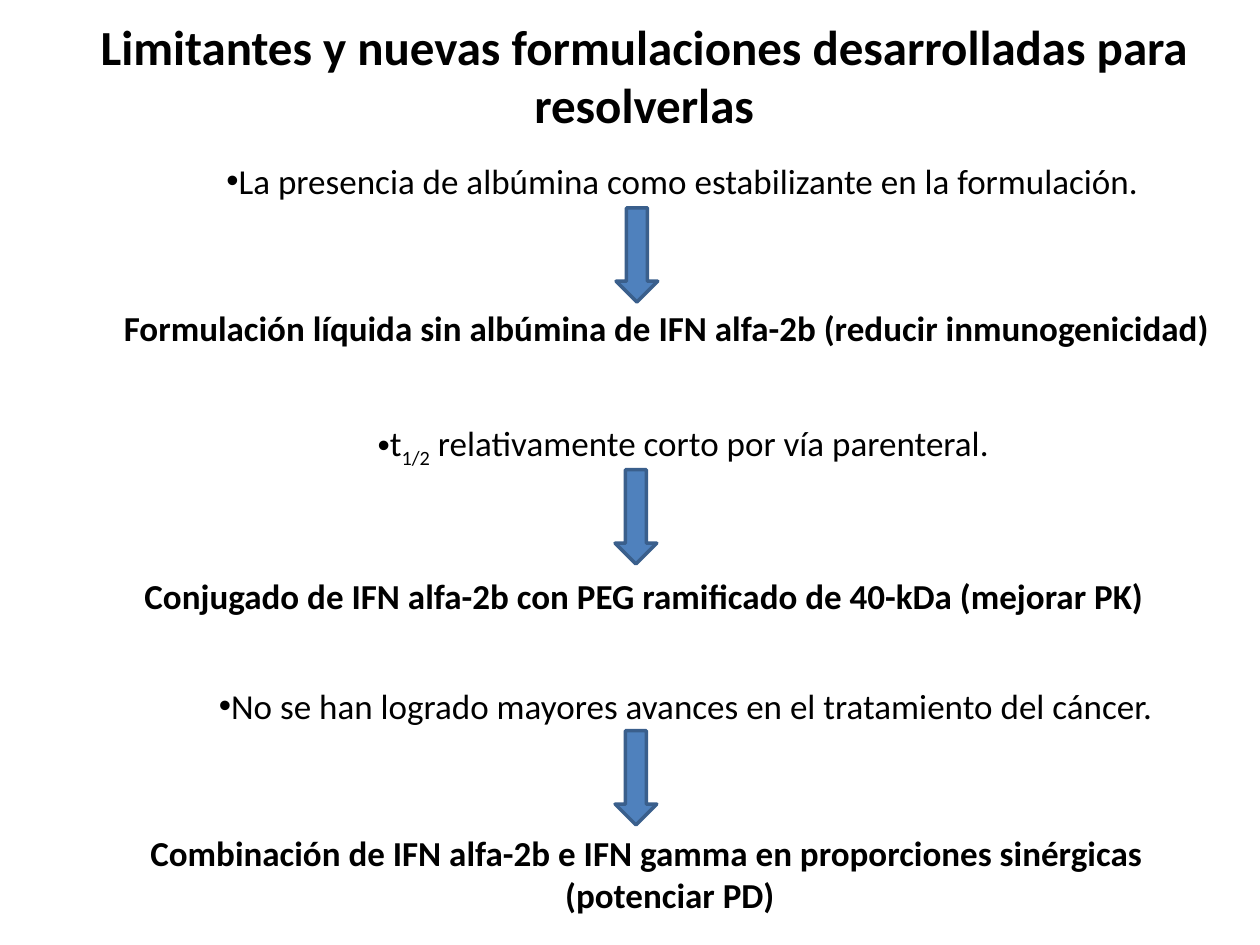
from lxml.etree import SubElement
from pptx import Presentation
from pptx.dml.color import RGBColor
from pptx.enum.shapes import MSO_SHAPE
from pptx.enum.text import MSO_AUTO_SIZE, PP_ALIGN
from pptx.oxml.ns import qn
from pptx.util import Cm, Pt

INK = {"text": "000000", "arrow": "4F81BD", "edge": "3A5F8C"}
FONT = "Calibri"
TITLE = "Limitantes y nuevas formulaciones desarrolladas para resolverlas"
PAIRS = [
    {"box": (0.64, 3.1, 24.33, 4.09), "arrow": (12.42, 4.19), "hang": 0,
     "limit": [("La presencia de albúmina como estabilizante en la formulación.", 0)],
     "answer": "Formulación líquida sin albúmina de IFN alfa-2b (reducir inmunogenicidad)"},
    {"box": (1.07, 8.38, 23.5, 4.09), "arrow": (12.4, 9.47), "hang": -0.94,
     "limit": [("t", 0), ("1/2", -25000), (" relativamente corto por vía parenteral.", 0)],
     "answer": "Conjugado de IFN alfa-2b con PEG ramificado de 40-kDa (mejorar PK)"},
    {"box": (1.12, 13.67, 23.5, 4.95), "arrow": (12.4, 14.73), "hang": -0.94,
     "limit": [("No se han logrado mayores avances en el tratamiento del cáncer.", 0)],
     "answer": "Combinación de IFN alfa-2b e IFN gamma en proporciones sinérgicas (potenciar PD)"},
]


def color(key):
    return RGBColor.from_string(INK[key])


def add_box(slide, place):
    frame = slide.shapes.add_textbox(*map(Cm, place)).text_frame
    frame.word_wrap = True
    frame.auto_size = MSO_AUTO_SIZE.SHAPE_TO_FIT_TEXT
    return frame


def set_para(para, before=12, left=0, first=0, bullet=False):
    para.alignment = PP_ALIGN.CENTER
    para.space_before = Pt(before)
    para.space_after = Pt(6)
    props = para._p.get_or_add_pPr()
    props.set("marL", str(Cm(left)))
    props.set("indent", str(Cm(first)))
    if bullet:
        SubElement(props, qn("a:buFont")).set("typeface", "Arial")
        SubElement(props, qn("a:buChar")).set("char", "•")


def add_run(para, text, size=20, bold=False, base=0):
    run = para.add_run()
    run.text = text
    font = run.font
    font.name, font.size, font.bold = FONT, Pt(size), bold
    font.color.rgb = color("text")
    if base:
        run._r.get_or_add_rPr().set("baseline", str(base))


def add_title(slide):
    para = add_box(slide, (1.3, 0.2, 23.37, 2.64)).paragraphs[0]
    set_para(para)
    add_run(para, TITLE, 28, True)


def add_pair(slide, pair):
    frame = add_box(slide, pair["box"])
    limit = frame.paragraphs[0]
    set_para(limit, left=1.27, first=0.64, bullet=True)
    for text, base in pair["limit"]:
        add_run(limit, text, base=base)
    answer = frame.add_paragraph()
    set_para(answer, before=54, left=1.27, first=pair["hang"])
    add_run(answer, pair["answer"], bold=True)


def add_arrow(slide, left, top):
    arrow = slide.shapes.add_shape(
        MSO_SHAPE.DOWN_ARROW, Cm(left), Cm(top), Cm(0.84), Cm(1.9))
    arrow.shadow.inherit = False
    arrow.fill.solid()
    arrow.fill.fore_color.rgb = color("arrow")
    arrow.line.color.rgb = color("edge")
    arrow.line.width = Pt(2)


def main():
    deck = Presentation()
    deck.slide_width, deck.slide_height = Cm(25.4), Cm(19.05)
    slide = deck.slides.add_slide(deck.slide_layouts[6])
    add_title(slide)
    for pair in PAIRS:
        add_pair(slide, pair)
        add_arrow(slide, *pair["arrow"])
    deck.save("out.pptx")


if __name__ == "__main__":
    main()
